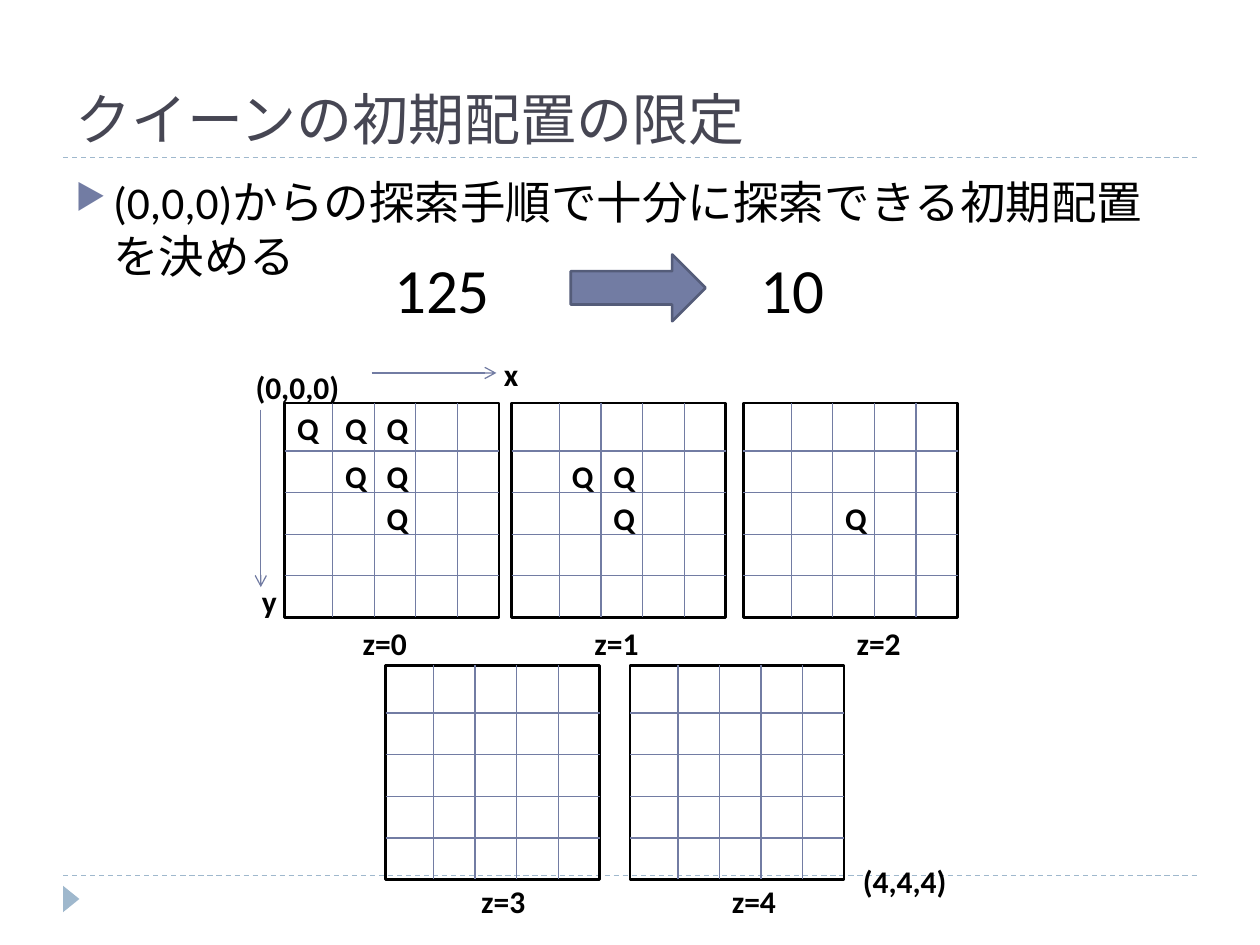
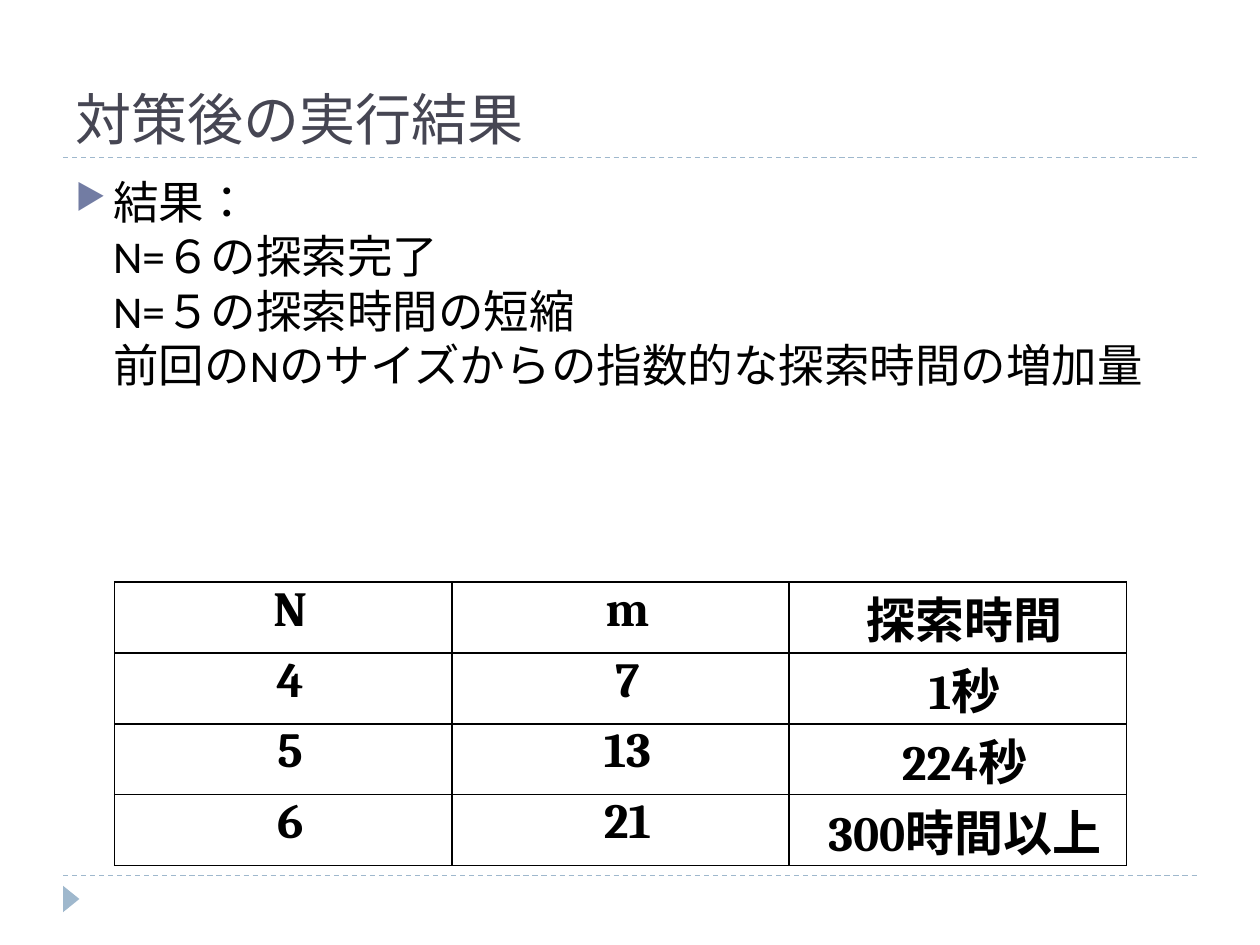
from dataclasses import dataclass

from lxml.etree import SubElement
from pptx import Presentation
from pptx.dml.color import RGBColor
from pptx.enum.dml import MSO_LINE
from pptx.enum.lang import MSO_LANGUAGE_ID
from pptx.enum.shapes import MSO_CONNECTOR, MSO_SHAPE
from pptx.enum.text import MSO_ANCHOR, MSO_AUTO_SIZE, PP_ALIGN
from pptx.oxml.ns import qn
from pptx.shapes.autoshape import Shape
from pptx.shapes.connector import Connector
from pptx.slide import Slide
from pptx.table import _Cell as Cell
from pptx.text.text import TextFrame
from pptx.util import Inches, Pt

COLORS = {
    "black": "000000",
    "title": "464653",
    "accent": "727CA3",
    "accent_dark": "545C79",
    "pale": "9FB8CD",
}
TITLE_FONT = "TeX Gyre Bonum"
BODY_FONT = "Calibri"
TABLE_FONT = "Cambria"

BOARD_SIZE = 1.7
CELL_STARTS = [0] + [0.38 + 0.33 * step for step in range(4)]
LABEL_HEIGHT = 0.4


@dataclass
class Board:
    """One z layer; queens are (column, row) cells."""
    z: int
    left: float
    top: float
    label_left: float
    label_top: float
    queens: tuple[tuple[int, int], ...] = ()


@dataclass
class Label:
    text: str
    left: float
    top: float
    width: float


BOARDS = [
    Board(0, 2.26, 3.2, 2.78, 4.9, ((0, 0), (1, 0), (2, 0), (1, 1), (2, 1), (2, 2))),
    Board(1, 4.06, 3.2, 4.62, 4.9, ((1, 1), (2, 1), (2, 2))),
    Board(2, 5.9, 3.2, 6.7, 4.9, ((2, 2),)),
    Board(3, 3.06, 5.28, 3.72, 6.95),
    Board(4, 5, 5.28, 5.71, 6.95),
]
AXIS_LABELS = [
    Label("x", 3.9, 2.77, 0.32),
    Label("y", 1.98, 4.57, 0.32),
    Label("(0,0,0)", 1.93, 2.87, 0.87),
    Label("(4,4,4)", 6.75, 6.79, 0.87),
]
RESULTS = [
    ("N", "m", "探索時間"),
    ("4", "7", "1秒"),
    ("5", "13", "224秒"),
    ("6", "21", "300時間以上"),
]


def rgb(name: str) -> RGBColor:
    return RGBColor.from_string(COLORS[name])


def write_text(frame: TextFrame, text: str, *, size: float = 18, font: str = BODY_FONT,
               color: str = "black", bold: bool = False,
               align: PP_ALIGN = PP_ALIGN.LEFT) -> None:
    paragraph = frame.paragraphs[0]
    paragraph.text = text
    paragraph.alignment = align
    for run in paragraph.runs:
        run.font.name = font
        run.font.size = Pt(size)
        run.font.bold = bold
        run.font.color.rgb = rgb(color)
        run.font.language_id = MSO_LANGUAGE_ID.JAPANESE


def add_text(slide: Slide, text: str, left: float, top: float, width: float,
             height: float, *, wrap: bool = True, grow: bool = False,
             anchor: MSO_ANCHOR = MSO_ANCHOR.TOP, **text_format) -> TextFrame:
    box = slide.shapes.add_textbox(Inches(left), Inches(top), Inches(width), Inches(height))
    frame = box.text_frame
    frame.word_wrap = wrap
    frame.auto_size = MSO_AUTO_SIZE.SHAPE_TO_FIT_TEXT if grow else MSO_AUTO_SIZE.NONE
    frame.vertical_anchor = anchor
    write_text(frame, text, **text_format)
    return frame


def add_label(slide: Slide, label: Label) -> None:
    add_text(slide, label.text, label.left, label.top, label.width, LABEL_HEIGHT,
             wrap=False, grow=True, bold=True)


def add_shape(slide: Slide, kind: MSO_SHAPE, left: float, top: float, width: float,
              height: float, *, fill: str | None = None, line: str | None = None) -> Shape:
    shape = slide.shapes.add_shape(kind, Inches(left), Inches(top),
                                   Inches(width), Inches(height))
    shape.shadow.inherit = False
    if fill:
        shape.fill.solid()
        shape.fill.fore_color.rgb = rgb(fill)
    else:
        shape.fill.background()
    if line:
        shape.line.color.rgb = rgb(line)
        shape.line.width = Pt(1.5)
    else:
        shape.line.fill.background()
    return shape


def add_line(slide: Slide, x1: float, y1: float, x2: float, y2: float, *,
             color: str = "accent", dashed: bool = False, arrow: bool = False) -> Connector:
    connector = slide.shapes.add_connector(MSO_CONNECTOR.STRAIGHT, Inches(x1), Inches(y1),
                                           Inches(x2), Inches(y2))
    connector.line.color.rgb = rgb(color)
    connector.line.width = Pt(0.75)
    if dashed:
        connector.line.dash_style = MSO_LINE.DASH
    if arrow:
        SubElement(connector.line._get_or_add_ln(), qn("a:tailEnd"), type="arrow")
    SubElement(connector._element.spPr, qn("a:effectLst"))
    return connector


def add_bullet(frame: TextFrame) -> None:
    paragraph = frame.paragraphs[0]
    paragraph.space_before = Pt(6)
    properties = paragraph._p.get_or_add_pPr()
    properties.set("marL", str(Inches(0.3)))
    properties.set("indent", str(Inches(-0.3)))
    bullet_color = SubElement(properties, qn("a:buClr"))
    SubElement(bullet_color, qn("a:srgbClr"), val=COLORS["accent"])
    SubElement(properties, qn("a:buSzPct"), val="76000")
    SubElement(properties, qn("a:buChar"), char="▶")


def add_content_slide(presentation: Presentation, title: str, body: str) -> Slide:
    """Add a slide with the shared rules, corner mark, title and bulleted body."""
    slide = presentation.slides.add_slide(presentation.slide_layouts[6])
    for rule_top in (6.95, 1.25):
        add_line(slide, 0.5, rule_top, 9.5, rule_top, color="pale", dashed=True)
    mark = add_shape(slide, MSO_SHAPE.ISOSCELES_TRIANGLE, 0.46, 7.07, 0.21, 0.13, fill="pale")
    mark.rotation = 90
    add_text(slide, title, 0.5, 0.17, 9, 1.08, anchor=MSO_ANCHOR.BOTTOM,
             size=32, font=TITLE_FONT, color="title")
    add_bullet(add_text(slide, body, 0.5, 1.33, 9, 5.4, size=26))
    return slide


def add_board(slide: Slide, board: Board) -> None:
    left, top = board.left, board.top
    right, bottom = left + BOARD_SIZE, top + BOARD_SIZE
    add_shape(slide, MSO_SHAPE.RECTANGLE, left, top, BOARD_SIZE, BOARD_SIZE, line="black")
    for start in CELL_STARTS[1:]:
        add_line(slide, left, top + start, right, top + start)
        add_line(slide, left + start, top, left + start, bottom)
    for column, row in board.queens:
        add_label(slide, Label("Q", left + CELL_STARTS[column], top + CELL_STARTS[row], 0.38))
    add_label(slide, Label(f"z={board.z}", board.label_left, board.label_top, 0.56))


def set_borders(cell: Cell, top_width: float, bottom_width: float) -> None:
    properties = cell._tc.get_or_add_tcPr()
    widths = {"lnL": 1, "lnR": 1, "lnT": top_width, "lnB": bottom_width}
    for side, width in widths.items():
        border = SubElement(properties, qn(f"a:{side}"), w=str(Pt(width)))
        fill = SubElement(border, qn("a:solidFill"))
        SubElement(fill, qn("a:srgbClr"), val=COLORS["black"])


def add_results_table(slide: Slide) -> None:
    row_height = 0.56
    table = slide.shapes.add_table(len(RESULTS), len(RESULTS[0]), Inches(0.91), Inches(4.62),
                                   Inches(8.03), Inches(row_height * len(RESULTS))).table
    table.first_row = table.horz_banding = False
    for row_index, values in enumerate(RESULTS):
        for column_index, value in enumerate(values):
            cell = table.cell(row_index, column_index)
            cell.margin_left = cell.margin_right = Inches(0.07)
            cell.margin_top = cell.margin_bottom = 0
            set_borders(cell, top_width=1.5 if row_index == 1 else 1,
                        bottom_width=1.5 if row_index == 0 else 1)
            cell.fill.background()
            write_text(cell.text_frame, value, size=28, font=TABLE_FONT, bold=True,
                       align=PP_ALIGN.CENTER)
            properties = cell.text_frame.paragraphs[0]._p.get_or_add_pPr()
            properties.set("indent", str(Inches(0.11)))


def build_placement_slide(presentation: Presentation) -> None:
    slide = add_content_slide(presentation, "クイーンの初期配置の限定",
                              "(0,0,0)からの探索手順で十分に探索できる初期配置を決める")
    for board in BOARDS:
        add_board(slide, board)
    add_line(slide, 2.95, 2.96, 3.94, 2.96, arrow=True)
    add_line(slide, 2.07, 3.25, 2.07, 4.66, arrow=True)
    for label in AXIS_LABELS:
        add_label(slide, label)
    add_text(slide, "125", 3.03, 1.94, 1.02, 0.71, grow=True, size=36)
    add_text(slide, "10", 5.94, 1.94, 0.79, 0.71, grow=True, size=36)
    add_shape(slide, MSO_SHAPE.RIGHT_ARROW, 4.53, 2.02, 1.07, 0.53,
              fill="accent", line="accent_dark")


def build_results_slide(presentation: Presentation) -> None:
    lines = ["結果：", "N=６の探索完了", "N=５の探索時間の短縮",
             "前回のNのサイズからの指数的な探索時間の増加量"]
    slide = add_content_slide(presentation, "対策後の実行結果", "\n".join(lines))
    add_results_table(slide)


def main() -> None:
    presentation = Presentation()
    presentation.slide_width = Inches(10)
    presentation.slide_height = Inches(7.5)
    build_placement_slide(presentation)
    build_results_slide(presentation)
    presentation.save("out.pptx")


if __name__ == "__main__":
    main()
